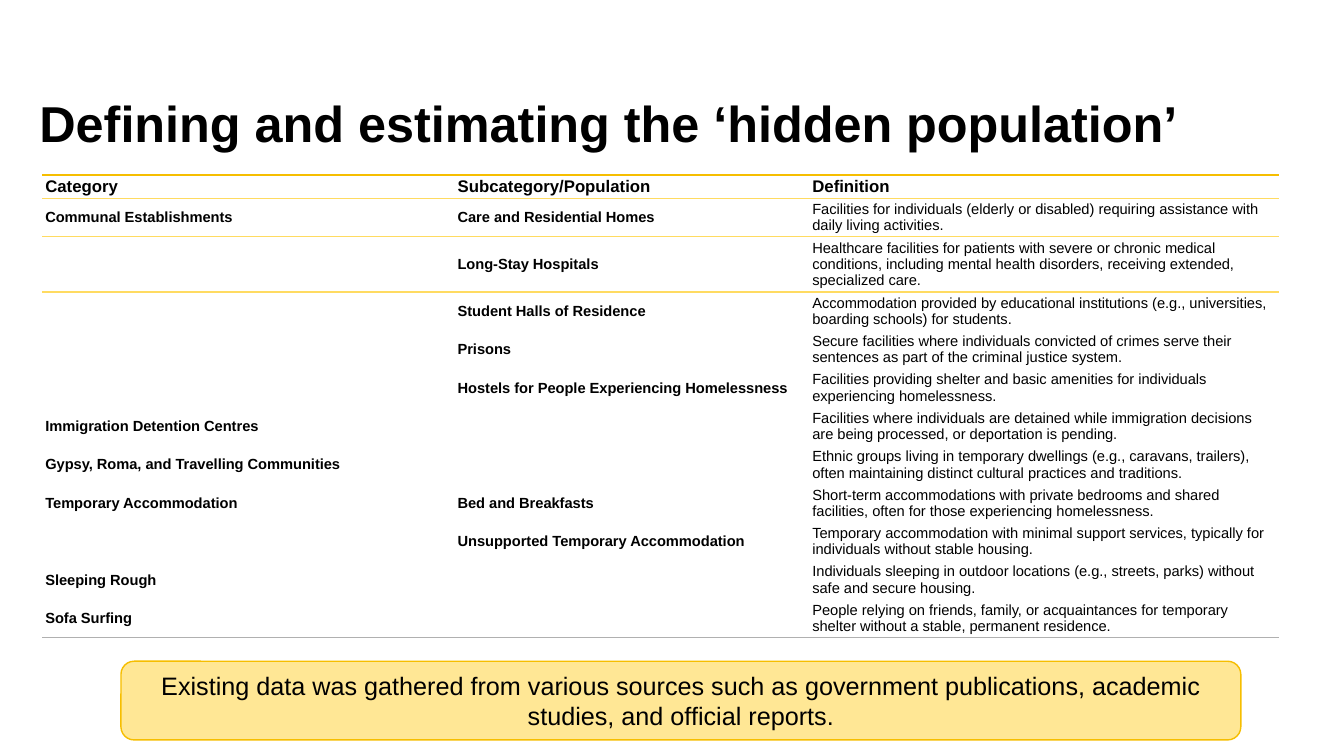
from lxml.etree import SubElement as Sub
from pptx import Presentation
from pptx.dml.color import RGBColor
from pptx.enum.shapes import MSO_SHAPE as Shape
from pptx.enum.text import MSO_ANCHOR as Anchor, PP_ALIGN as Align
from pptx.oxml.ns import qn
from pptx.util import Pt

TITLE = "Defining and estimating the ‘hidden population’"
NOTE = ("Existing data was gathered from various sources such as government "
        "publications, academic studies, and official reports.")
ROWS = [
    ("Category", "Subcategory/Population", "Definition"),
    ("Communal Establishments", "Care and Residential Homes",
     "Facilities for individuals (elderly or disabled) requiring assistance "
     "with daily living activities."),
    ("", "Long-Stay Hospitals",
     "Healthcare facilities for patients with severe or chronic medical "
     "conditions, including mental health disorders, receiving extended, "
     "specialized care."),
    ("", "Student Halls of Residence",
     "Accommodation provided by educational institutions (e.g., universities, "
     "boarding schools) for students."),
    ("", "Prisons",
     "Secure facilities where individuals convicted of crimes serve their "
     "sentences as part of the criminal justice system."),
    ("", "Hostels for People Experiencing Homelessness",
     "Facilities providing shelter and basic amenities for individuals "
     "experiencing homelessness."),
    ("Immigration Detention Centres", "",
     "Facilities where individuals are detained while immigration decisions "
     "are being processed, or deportation is pending."),
    ("Gypsy, Roma, and Travelling Communities", "",
     "Ethnic groups living in temporary dwellings (e.g., caravans, trailers), "
     "often maintaining distinct cultural practices and traditions."),
    ("Temporary Accommodation", "Bed and Breakfasts",
     "Short-term accommodations with private bedrooms and shared facilities, "
     "often for those experiencing homelessness."),
    ("", "Unsupported Temporary Accommodation",
     "Temporary accommodation with minimal support services, typically for "
     "individuals without stable housing."),
    ("Sleeping Rough", "",
     "Individuals sleeping in outdoor locations (e.g., streets, parks) "
     "without safe and secure housing."),
    ("Sofa Surfing", "",
     "People relying on friends, family, or acquaintances for temporary "
     "shelter without a stable, permanent residence."),
]
WIDTHS = [294.5, 253.4, 335.5]
HEAD, TALL, ROW = 16.5, 39.4, 27.45
HEIGHTS = [HEAD, ROW, TALL] + [ROW] * (len(ROWS) - 3)
GOLD, LIGHT, PALE, GREY, BLACK = "F6BE00", "FFDB61", "FFE795", "B0B0B0", "000000"
# Rules by row: top edge, bottom edge, as colour and width
RULES = {
    0: ((GOLD, 1.5), (LIGHT, 1)),
    1: ((LIGHT, 1), (LIGHT, 1)),
    2: ((LIGHT, 1), None),
    len(ROWS) - 1: (None, (GREY, 0.75)),
}
PLAIN = "{2D5ABB26-0587-4C30-8999-92F81FD0307C}"


def color(code):
    return RGBColor.from_string(code)


def style(para, size, bold=False):
    font = para.font
    for item in [font] + [run.font for run in para.runs]:
        item.name, item.size, item.bold = "Arial", Pt(size), bold
        item.color.rgb = color(BLACK)


def rule(cell, tag, code, width):
    """Draw one border of a cell."""
    line = Sub(cell._tc.get_or_add_tcPr(), qn(tag), w=str(Pt(width)))
    fill = Sub(line, qn("a:solidFill"))
    Sub(fill, qn("a:srgbClr"), val=code)


def add_title(slide):
    box = slide.shapes.add_textbox(Pt(28.1), Pt(70.6), Pt(901.4), Pt(108))
    frame = box.text_frame
    frame.word_wrap = True
    frame.margin_left = frame.margin_right = 0
    frame.margin_top = frame.margin_bottom = 0
    frame.text = TITLE
    para = frame.paragraphs[0]
    para.line_spacing = 0.9
    style(para, 36, True)


def add_note(slide):
    box = slide.shapes.add_shape(
        Shape.ROUNDED_RECTANGLE, Pt(86.4), Pt(472.3), Pt(799.9), Pt(56.2))
    box.shadow.inherit = False
    box.fill.solid()
    box.fill.fore_color.rgb = color(PALE)
    box.line.color.rgb = color(GOLD)
    box.line.width = Pt(1)
    frame = box.text_frame
    frame.word_wrap = True
    frame.vertical_anchor = Anchor.MIDDLE
    frame.text = NOTE
    para = frame.paragraphs[0]
    para.alignment = Align.CENTER
    para.space_after = Pt(8)
    style(para, 18)


def fill_cell(cell, text, row, col):
    cell.margin_left = cell.margin_right = Pt(2.2)
    cell.margin_top = cell.margin_bottom = Pt(0.7)
    cell.vertical_anchor = Anchor.MIDDLE
    cell.text = text
    style(cell.text_frame.paragraphs[0], 10.5 if row else 12,
          row == 0 or col < 2)
    for tag, edge in zip(("a:lnT", "a:lnB"), RULES.get(row, ())):
        if edge:
            rule(cell, tag, *edge)
    cell.fill.background()


def add_grid(slide):
    frame = slide.shapes.add_table(
        len(ROWS), len(WIDTHS), Pt(30.2), Pt(125.2),
        Pt(sum(WIDTHS)), Pt(sum(HEIGHTS)))
    table = frame.table
    table.first_row = table.horz_banding = False
    table._tbl.tblPr.find(qn("a:tableStyleId")).text = PLAIN
    for col, width in zip(table.columns, WIDTHS):
        col.width = Pt(width)
    for row, (height, texts) in enumerate(zip(HEIGHTS, ROWS)):
        table.rows[row].height = Pt(height)
        for col, text in enumerate(texts):
            fill_cell(table.cell(row, col), text, row, col)


def main():
    deck = Presentation()
    deck.slide_width, deck.slide_height = Pt(960), Pt(540)
    slide = deck.slides.add_slide(deck.slide_layouts[6])
    add_title(slide)
    add_note(slide)
    add_grid(slide)
    deck.save("out.pptx")


if __name__ == "__main__":
    main()
